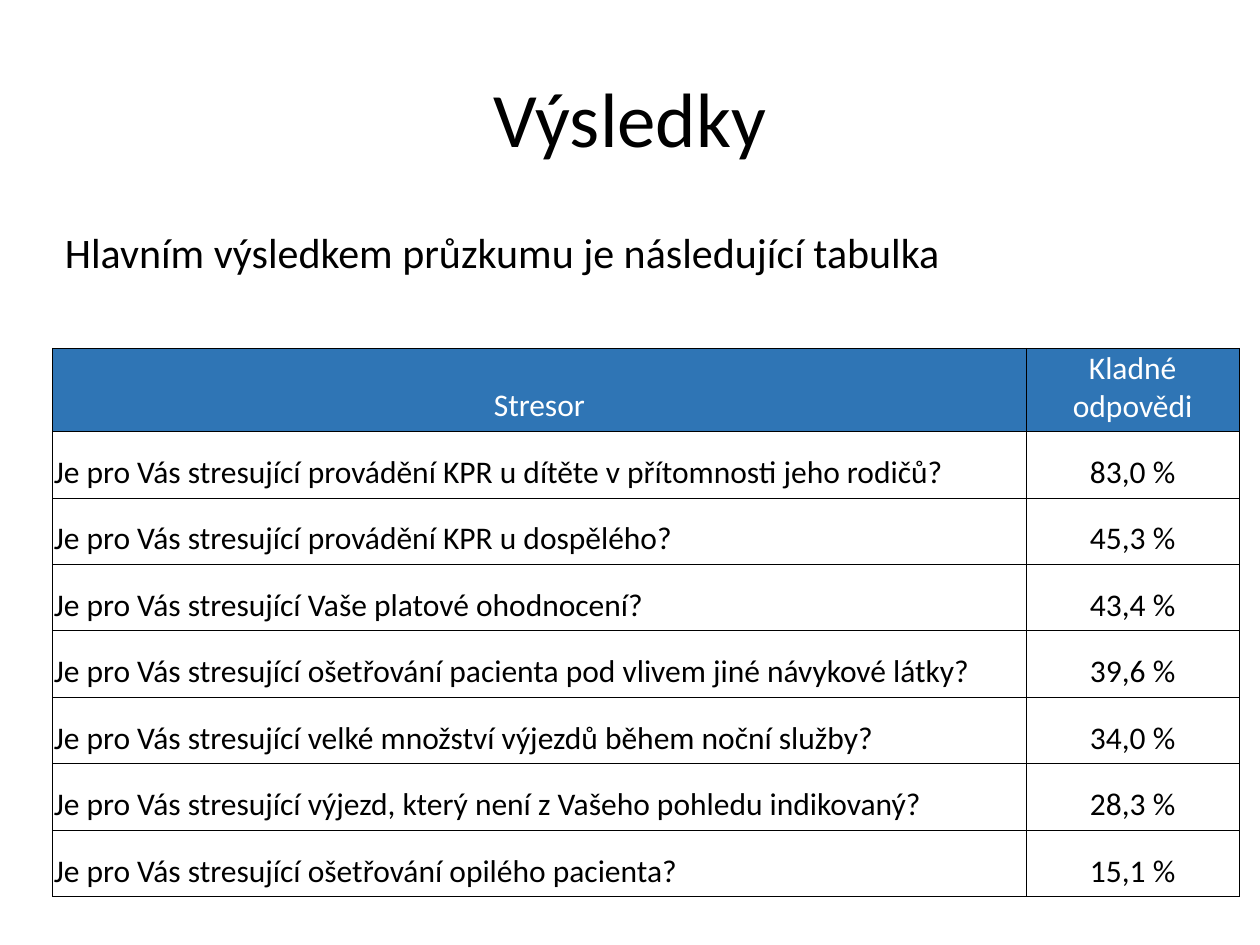
from lxml.etree import SubElement
from pptx import Presentation
from pptx.dml.color import RGBColor
from pptx.enum.text import MSO_ANCHOR, PP_ALIGN
from pptx.oxml.ns import qn
from pptx.util import Pt

BLACK = RGBColor(0x00, 0x00, 0x00)
WHITE = RGBColor(0xFF, 0xFF, 0xFF)
BLUE = RGBColor(0x2F, 0x75, 0xB5)
FONT = "Calibri"

HEADER = ("Stresor", "Kladné odpovědi")
ANSWERS = [
    ("Je pro Vás stresující provádění KPR u dítěte v přítomnosti jeho rodičů?", "83,0 %"),
    ("Je pro Vás stresující provádění KPR u dospělého?", "45,3 %"),
    ("Je pro Vás stresující Vaše platové ohodnocení?", "43,4 %"),
    ("Je pro Vás stresující ošetřování pacienta pod vlivem jiné návykové látky?", "39,6 %"),
    ("Je pro Vás stresující velké množství výjezdů během noční služby?", "34,0 %"),
    ("Je pro Vás stresující výjezd, který není z Vašeho pohledu indikovaný?", "28,3 %"),
    ("Je pro Vás stresující ošetřování opilého pacienta?", "15,1 %"),
]


def write(frame, text, size, color=BLACK, align=PP_ALIGN.LEFT):
    frame.text = text
    paragraph = frame.paragraphs[0]
    paragraph.alignment = align
    font = paragraph.runs[0].font
    font.name, font.size = FONT, Pt(size)
    font.color.rgb = color


def add_text(slide, box, text, size, align=PP_ALIGN.LEFT, anchor=MSO_ANCHOR.TOP):
    frame = slide.shapes.add_textbox(*map(Pt, box)).text_frame
    frame.word_wrap = True
    frame.vertical_anchor = anchor
    write(frame, text, size, align=align)


def set_borders(cell, sides):
    """Draw thin black lines on the given sides and none on the others."""
    properties = cell._tc.get_or_add_tcPr()
    for position, side in enumerate("LRTB"):
        line = SubElement(properties, qn(f"a:ln{side}"), w=str(Pt(0.5)))
        properties.insert(position, line)
        if side in sides:
            fill = SubElement(line, qn("a:solidFill"))
            SubElement(fill, qn("a:srgbClr"), val=str(BLACK))
        else:
            SubElement(line, qn("a:noFill"))


def add_results(slide, box, answer_width):
    left, top, width, height = box
    # The first row is an open spacer above the header
    rows = [("", ""), HEADER, *ANSWERS]
    table = slide.shapes.add_table(len(rows), 2, *map(Pt, box)).table
    table.first_row = table.horz_banding = False
    table.columns[0].width = Pt(width - answer_width)
    table.columns[1].width = Pt(answer_width)
    for r, texts in enumerate(rows):
        table.rows[r].height = Pt(height / len(rows))
        is_header = texts is HEADER
        for c, text in enumerate(texts):
            cell = table.cell(r, c)
            if is_header:
                cell.fill.solid()
                cell.fill.fore_color.rgb = BLUE
            else:
                cell.fill.background()
            set_borders(cell, "LRTB" if text else "B")
            if not text:
                continue
            cell.vertical_anchor = MSO_ANCHOR.BOTTOM
            cell.margin_left = cell.margin_right = cell.margin_top = Pt(0.75)
            cell.margin_bottom = Pt(3.6)
            centred = is_header or c == 1
            write(cell.text_frame, text, 18, WHITE if is_header else BLACK,
                  PP_ALIGN.CENTER if centred else PP_ALIGN.LEFT)


def main():
    presentation = Presentation()
    presentation.slide_width, presentation.slide_height = Pt(720), Pt(540)
    slide = presentation.slides.add_slide(presentation.slide_layouts[6])

    # Title
    add_text(slide, (36, 21.6, 648, 90), "Výsledky", 44,
             PP_ALIGN.CENTER, MSO_ANCHOR.MIDDLE)
    # Table of stressors
    add_results(slide, (30, 161, 678, 342), 121.5)
    # Lead-in sentence
    add_text(slide, (30, 126, 588, 36),
             "Hlavním výsledkem průzkumu je následující tabulka", 24)

    presentation.save("out.pptx")


if __name__ == "__main__":
    main()
